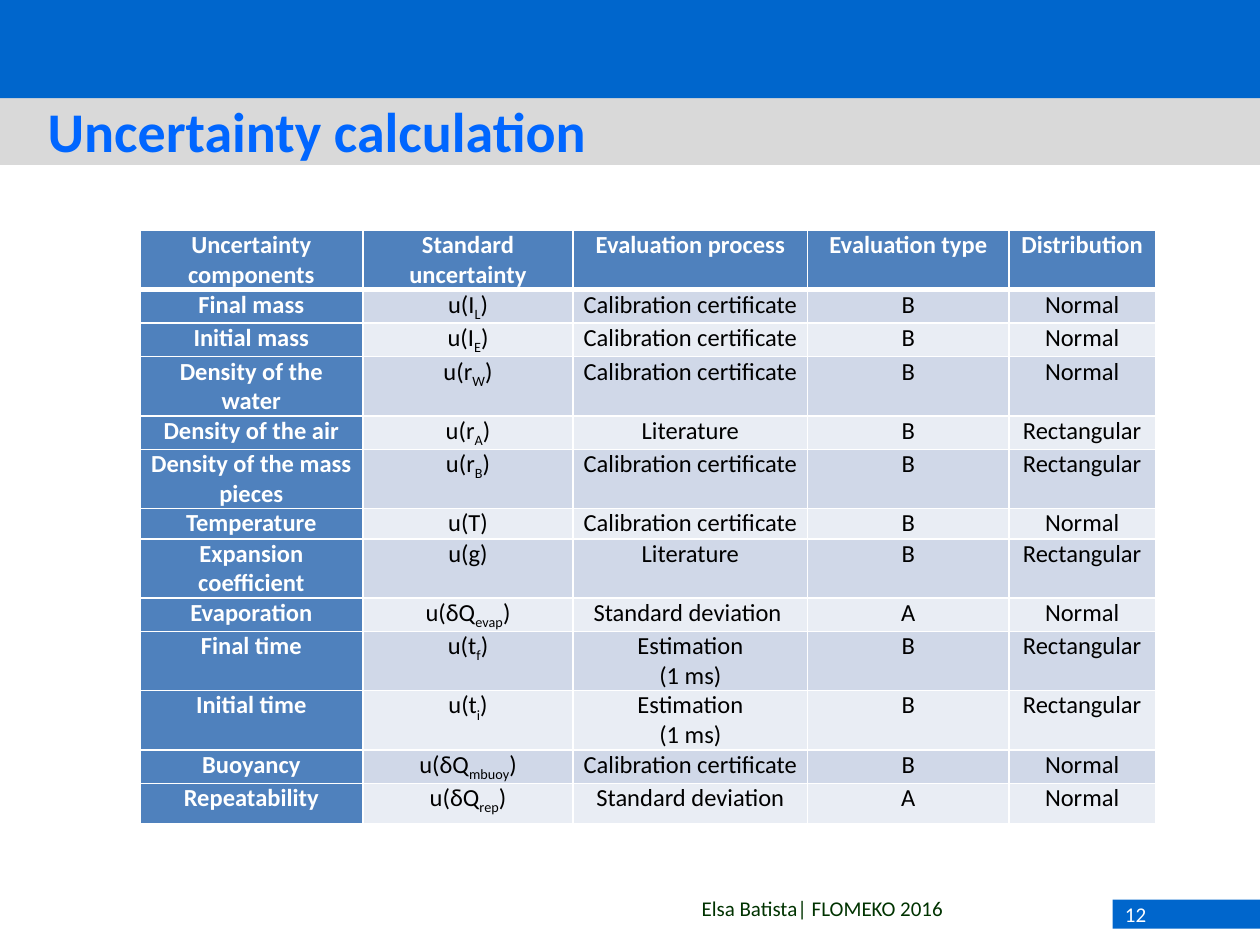
import pptx
import pptx.dml.color
import pptx.enum.shapes
import pptx.enum.text
import pptx.oxml
import pptx.oxml.ns
import pptx.util

COLORS = {
    "band": "0066CC", "strip": "D9D9D9", "title": "0066FF", "footer": "003300",
    "head": "4F81BD", "odd": "D0D8E8", "even": "E9EDF4",
    "white": "FFFFFF", "black": "000000",
}
GRID_COLS, GRID_ROWS = 100, 75
HEADERS = ["Uncertainty components", "Standard uncertainty", "Evaluation process",
           "Evaluation type", "Distribution"]
CERTIFICATE, DEVIATION = "Calibration certificate", "Standard deviation"
COMPONENTS = [
    ("Final mass", "I_L", CERTIFICATE, "B", "Normal", 2.6),
    ("Initial mass", "I_E", CERTIFICATE, "B", "Normal", 2.6),
    ("Density of the water", "r_W", CERTIFICATE, "B", "Normal", 4.7),
    ("Density of the air", "r_A", "Literature", "B", "Rectangular", 2.6),
    ("Density of the mass pieces", "r_B", CERTIFICATE, "B", "Rectangular", 4.7),
    ("Temperature", "T", CERTIFICATE, "B", "Normal", 2.4),
    ("Expansion coefficient", "g", "Literature", "B", "Rectangular", 4.7),
    ("Evaporation", "δQ_evap", DEVIATION + " ", "A", "Normal", 2.6),
    ("Final time", "t_f", "Estimation\n(1 ms)", "B", "Rectangular", 4.7),
    ("Initial time", "t_i", "Estimation\n(1 ms)", "B", "Rectangular", 4.7),
    ("Buoyancy", "δQ_mbuoy", CERTIFICATE, "B", "Normal", 2.6),
    ("Repeatability", "δQ_rep", DEVIATION, "A", "Normal", 3.2),
]


def rgb(name):
    return pptx.dml.color.RGBColor.from_string(COLORS[name])


class Deck:
    font = "Calibri"

    def __init__(self):
        self.prs = pptx.Presentation()
        self.prs.slide_width = pptx.util.Inches(10)
        self.prs.slide_height = pptx.util.Inches(7.5)
        self.s = self.prs.slides.add_slide(self.prs.slide_layouts[6])

    def x(self, cols):
        return round(self.prs.slide_width * cols / GRID_COLS)

    def y(self, rows):
        return round(self.prs.slide_height * rows / GRID_ROWS)

    def box(self, left, top, width, height):
        return self.x(left), self.y(top), self.x(width), self.y(height)

    def style(self, p, size, color, bold=False):
        p.font.name = self.font
        p.font.size = pptx.util.Pt(size)
        p.font.bold = bold
        p.font.color.rgb = rgb(color)

    def label(self, tf, text, size, color, bold=False):
        tf.word_wrap = True
        tf.vertical_anchor = pptx.enum.text.MSO_ANCHOR.MIDDLE
        p = tf.paragraphs[0]
        p.text = text
        p.alignment = pptx.enum.text.PP_ALIGN.LEFT
        self.style(p, size, color, bold)

    def rect(self, *place, fill):
        sp = self.s.shapes.add_shape(pptx.enum.shapes.MSO_SHAPE.RECTANGLE, *self.box(*place))
        sp.shadow.inherit = False
        sp.fill.solid()
        sp.fill.fore_color.rgb = rgb(fill)
        sp.line.fill.background()
        return sp

    def text(self, *place, text, size, color, bold=False):
        sp = self.s.shapes.add_textbox(*self.box(*place))
        self.label(sp.text_frame, text, size, color, bold)

    def borders(self, cell, bottom):
        tcPr = cell._tc.get_or_add_tcPr()
        ns = pptx.oxml.ns.nsdecls("a")
        for i, (side, width) in enumerate((("L", 1), ("R", 1), ("T", 1), ("B", bottom))):
            tcPr.insert(i, pptx.oxml.parse_xml(
                f'<a:ln{side} {ns} w="{pptx.util.Pt(width)}"><a:solidFill>'
                f'<a:srgbClr val="{COLORS["white"]}"/></a:solidFill></a:ln{side}>'))

    def cell(self, cell, text, fill, color, bold, bottom=1, symbol=False):
        cell.margin_left = cell.margin_right = pptx.util.Inches(0.07)
        cell.margin_top = cell.margin_bottom = 0
        cell.fill.solid()
        cell.fill.fore_color.rgb = rgb(fill)
        self.borders(cell, bottom)
        tf = cell.text_frame
        if symbol:
            base, _, sub = text.partition("_")
            p = tf.paragraphs[0]
            if sub:
                p.add_run().text = f"u({base}"
                r = p.add_run()
                r.text = sub
                r.font._element.set("baseline", "-25000")
                p.add_run().text = ")"
            else:
                p.add_run().text = f"u({base})"
        else:
            tf.text = text
        for p in tf.paragraphs:
            p.alignment = pptx.enum.text.PP_ALIGN.CENTER
            self.style(p, 14, color, bold)

    def table(self, left, top, widths, header_height, headers, records):
        heights = [header_height] + [record[-1] for record in records]
        table = self.s.shapes.add_table(
            len(heights), len(widths),
            *self.box(left, top, sum(widths), sum(heights))).table
        for column, width in zip(table.columns, widths):
            column.width = self.x(width)
        for row, height in zip(table.rows, heights):
            row.height = self.y(height)
        for j, text in enumerate(headers):
            self.cell(table.cell(0, j), text, "head", "white", True, bottom=3)
        for i, record in enumerate(records, 1):
            for j, text in enumerate(record[:-1]):
                if j == 0:
                    self.cell(table.cell(i, j), text, "head", "white", True)
                else:
                    self.cell(table.cell(i, j), text, "odd" if i % 2 else "even",
                              "black", False, symbol=j == 1)


def main():
    deck = Deck()
    deck.rect(0, 7.8, 100, 5.3, fill="strip")
    deck.rect(0, 0, 100, 7.8, fill="band")
    deck.text(54.7, 70.5, 32.3, 3.2, text="Elsa Batista| FLOMEKO 2016", size=12, color="footer")
    number = deck.rect(88.3, 71.4, 11.7, 2.3, fill="band")
    deck.label(number.text_frame, "12", 12, "white")
    deck.text(2.8, 6.2, 87.7, 8.3, text="Uncertainty calculation", size=32, color="title", bold=True)
    deck.table(11.1, 18.3, [17.7, 16.7, 18.6, 16, 11.6], 4.7, HEADERS, COMPONENTS)
    deck.prs.save("out.pptx")


if __name__ == "__main__":
    main()
